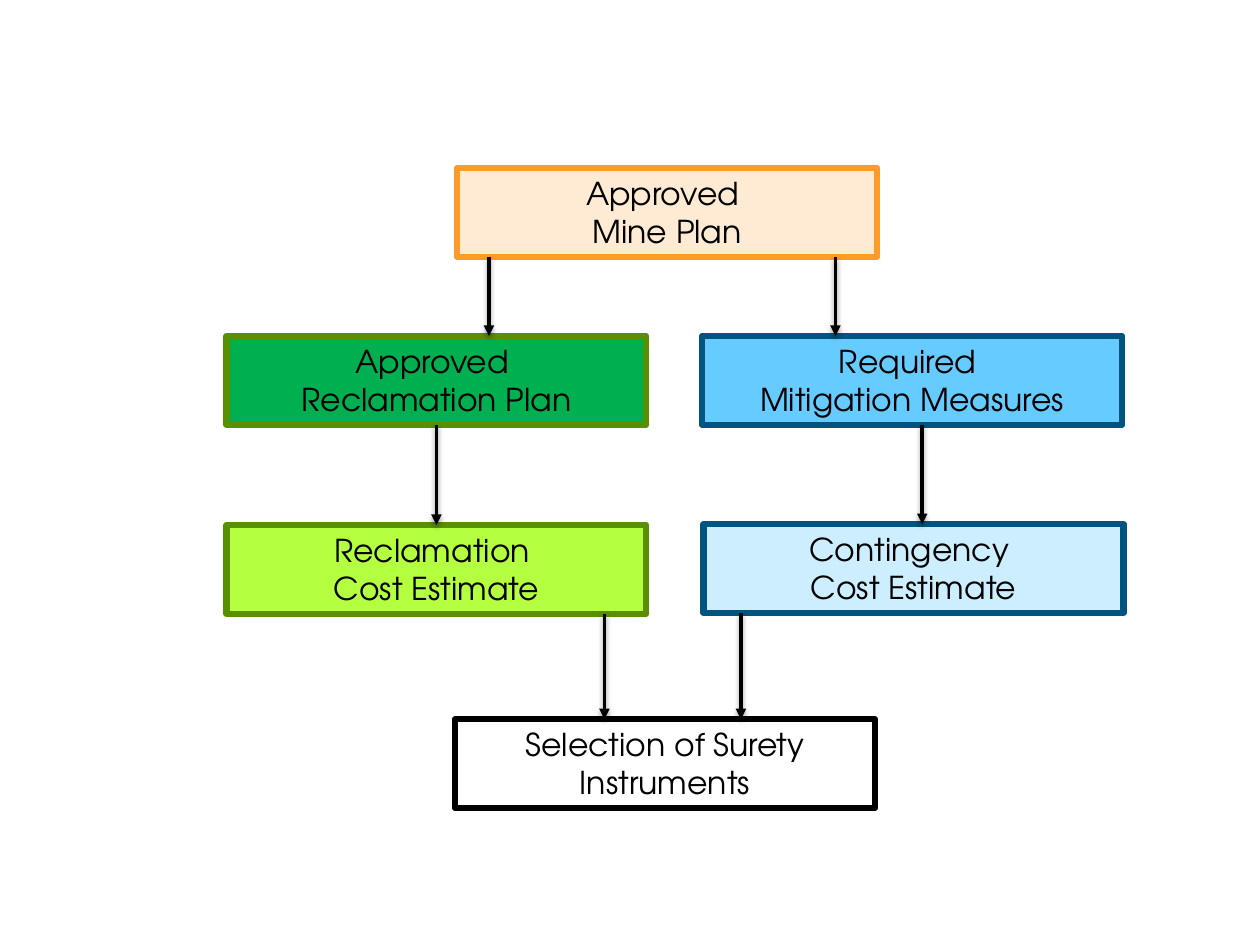
from lxml import etree
from pptx import Presentation
from pptx.dml.color import RGBColor
from pptx.enum.shapes import MSO_CONNECTOR as Connector, MSO_SHAPE as Shape
from pptx.enum.text import MSO_ANCHOR as Anchor, MSO_AUTO_SIZE as AutoSize, PP_ALIGN as Align
from pptx.oxml import parse_xml
from pptx.oxml.ns import nsdecls, qn
from pptx.util import Pt

BLACK = RGBColor(0x00, 0x00, 0x00)
ORANGE = RGBColor(0xFF, 0x9B, 0x26)
PEACH = RGBColor(0xFF, 0xEB, 0xD4)
DARK_GREEN = RGBColor(0x58, 0x90, 0x00)
GREEN = RGBColor(0x00, 0xB0, 0x50)
LIME = RGBColor(0xB4, 0xFF, 0x40)
DARK_BLUE = RGBColor(0x00, 0x54, 0x80)
BLUE = RGBColor(0x66, 0xCB, 0xFF)
PALE_BLUE = RGBColor(0xCC, 0xEE, 0xFF)

BOX_WIDTH, BOX_HEIGHT = 240, 50.8
FONT_FORMAT = {"name": "TeX Gyre Adventor", "size": Pt(18)}
FRAME_FORMAT = {
    "word_wrap": True,
    "auto_size": AutoSize.SHAPE_TO_FIT_TEXT,
    "vertical_anchor": Anchor.TOP,
}
ARROW_SHADOW = (
    f'<a:effectLst {nsdecls("a")}>'
    f'<a:outerShdw blurRad="{Pt(3.1)}" dist="{Pt(1.6)}" dir="5400000" rotWithShape="0">'
    '<a:srgbClr val="000000"><a:alpha val="38000"/></a:srgbClr>'
    "</a:outerShdw></a:effectLst>"
)

presentation = Presentation()
presentation.slide_width, presentation.slide_height = Pt(720), Pt(540)
slide = presentation.slides.add_slide(presentation.slide_layouts[6])

# name: left, top, fill, outline, paragraphs
BOXES = {
    "mine plan": (261.2, 96, PEACH, ORANGE, ["Approved ", "Mine Plan"]),
    "reclamation plan": (129.4, 192, GREEN, DARK_GREEN, ["Approved ", "Reclamation Plan"]),
    "mitigation": (401.2, 192, BLUE, DARK_BLUE, ["Required ", "Mitigation Measures"]),
    "reclamation cost": (129.4, 300, LIME, DARK_GREEN, ["Reclamation ", "Cost Estimate"]),
    "contingency cost": (402, 299.5, PALE_BLUE, DARK_BLUE, ["Contingency ", "Cost Estimate"]),
    "surety": (260, 411, None, BLACK, ["Selection of Surety Instruments"]),
}

boxes = {}
for name, (left, top, fill, outline, lines) in BOXES.items():
    box = slide.shapes.add_shape(
        Shape.RECTANGLE, Pt(left), Pt(top), Pt(BOX_WIDTH), Pt(BOX_HEIGHT)
    )
    box.shadow.inherit = False
    if fill is None:
        box.fill.background()
    else:
        box.fill.solid()
        box.fill.fore_color.rgb = fill
    box.line.color.rgb = outline
    box.line.width = Pt(3.5)
    frame = box.text_frame
    for attribute, value in FRAME_FORMAT.items():
        setattr(frame, attribute, value)
    frame.text = "\n".join(lines)
    for paragraph in frame.paragraphs:
        paragraph.alignment = Align.CENTER
        font = paragraph.runs[0].font
        for attribute, value in FONT_FORMAT.items():
            setattr(font, attribute, value)
        font.color.rgb = BLACK
    boxes[name] = box

# source, target, x (None joins the middles of the facing sides)
ARROWS = [
    ("mine plan", "reclamation plan", 279.4),
    ("mine plan", "mitigation", 477.4),
    ("reclamation plan", "reclamation cost", None),
    ("mitigation", "contingency cost", 527),
    ("reclamation cost", "surety", 345.4),
    ("contingency cost", "surety", 423.4),
]

for source_name, target_name, x in ARROWS:
    source, target = boxes[source_name], boxes[target_name]
    position = Pt(x or 0)
    arrow = slide.shapes.add_connector(
        Connector.STRAIGHT, position, source.top + source.height, position, target.top
    )
    if x is None:
        arrow.begin_connect(source, 2)
        arrow.end_connect(target, 0)
    arrow.line.color.rgb = BLACK
    arrow.line.width = Pt(2)
    properties = arrow._element.spPr
    etree.SubElement(properties.find(qn("a:ln")), qn("a:tailEnd"), type="triangle")
    properties.append(parse_xml(ARROW_SHADOW))

presentation.save("out.pptx")
